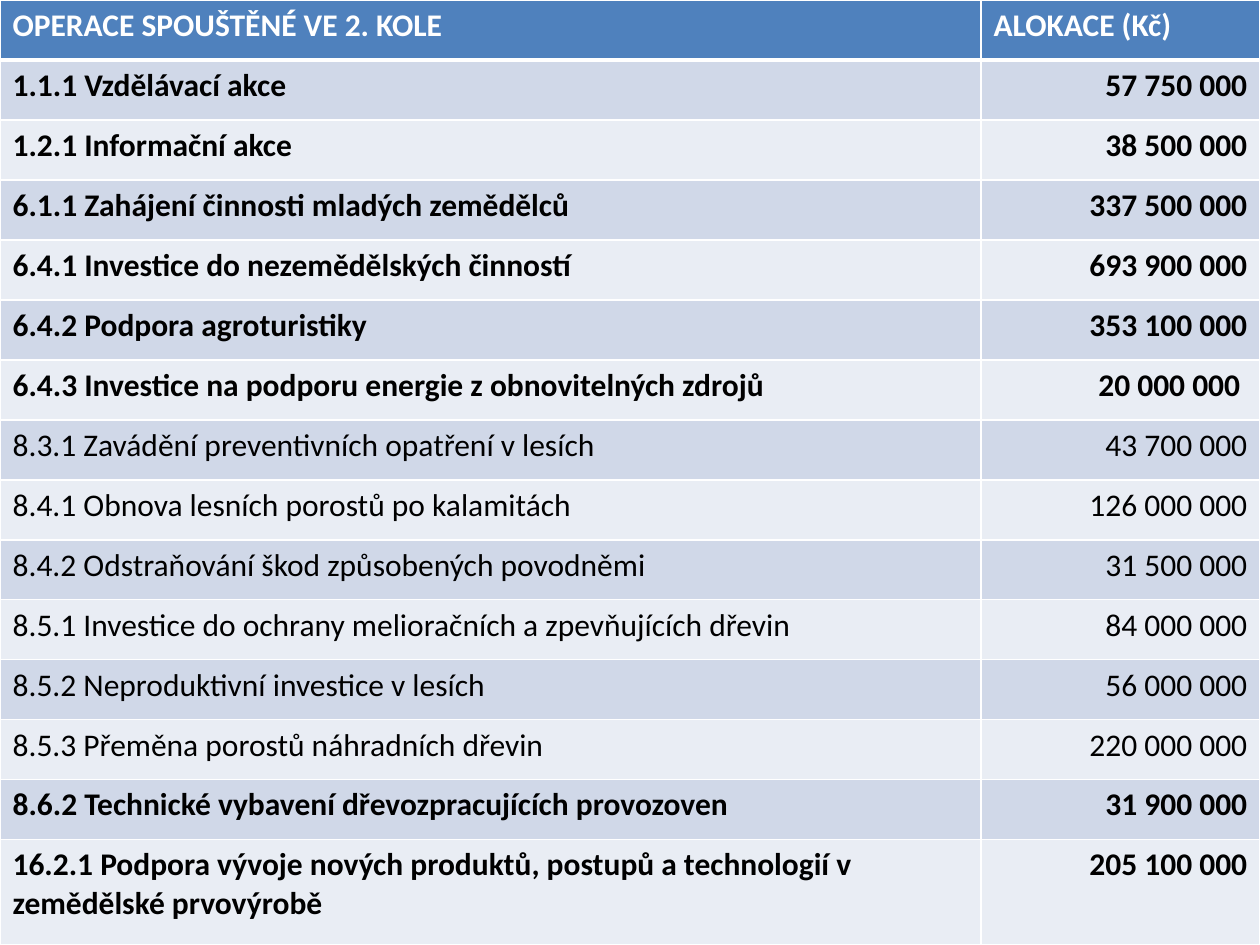
from lxml import etree
from pptx import Presentation
from pptx import util as u
from pptx.dml.color import RGBColor
from pptx.enum import text
from pptx.oxml.ns import qn

WIDTH, HEIGHT = 1260, 945
NAME_WIDTH, ROW_HEIGHT = 981, 60
WHITE, BLACK, HEADER_FILL = "FFFFFF", "000000", "4F81BD"
BAND_FILLS = ("E9EDF4", "D0D8E8")
HEADINGS = ("OPERACE SPOUŠTĚNÉ VE 2. KOLE", "ALOKACE (Kč)")
OPERATIONS = [
    ("1.1.1 Vzdělávací akce", "57 750 000", True),
    ("1.2.1 Informační akce", "38 500 000", True),
    ("6.1.1 Zahájení činnosti mladých zemědělců", "337 500 000", True),
    ("6.4.1 Investice do nezemědělských činností", "693 900 000", True),
    ("6.4.2 Podpora agroturistiky", "353 100 000", True),
    ("6.4.3 Investice na podporu energie z obnovitelných zdrojů", "20 000 000 ", True),
    ("8.3.1 Zavádění preventivních opatření v lesích", "43 700 000", False),
    ("8.4.1 Obnova lesních porostů po kalamitách", "126 000 000", False),
    ("8.4.2 Odstraňování škod způsobených povodněmi", "31 500 000", False),
    ("8.5.1 Investice do ochrany melioračních a zpevňujících dřevin", "84 000 000", False),
    ("8.5.2 Neproduktivní investice v lesích", "56 000 000", False),
    ("8.5.3 Přeměna porostů náhradních dřevin", "220 000 000", False),
    ("8.6.2 Technické vybavení dřevozpracujících provozoven", "31 900 000", True),
    ("16.2.1 Podpora vývoje nových produktů, postupů a technologií v zemědělské prvovýrobě",
     "205 100 000", True),
]


def px(length):
    """Turn px into EMU."""
    return u.Emu(round(length * 914400 / 126))


def colour(value):
    """Turn a hex string into a colour."""
    return RGBColor.from_string(value)


def set_borders(cell, top, bottom):
    """Give a cell white borders, with top and bottom widths in points."""
    properties = cell._tc.get_or_add_tcPr()
    for side, width in (("L", 1), ("R", 1), ("T", top), ("B", bottom)):
        line = etree.SubElement(properties, qn(f"a:ln{side}"), w=str(u.Pt(width)))
        fill = etree.SubElement(line, qn("a:solidFill"))
        etree.SubElement(fill, qn("a:srgbClr"), val=WHITE)


def fill_cell(cell, wording, fill, ink, bold, align):
    """Write and colour one cell."""
    cell.fill.solid()
    cell.fill.fore_color.rgb = colour(fill)
    para = cell.text_frame.paragraphs[0]
    para.text = wording
    para.alignment = align
    font = para.runs[0].font
    font.name, font.size, font.bold = "Calibri", u.Pt(18), bold
    font.color.rgb = colour(ink)


def add_allocation_table(page):
    """Add the table of operations and their allocations."""
    count = len(OPERATIONS) + 1
    table = page.shapes.add_table(count, 2, 0, 0, px(WIDTH), px(HEIGHT)).table
    table.columns[0].width = px(NAME_WIDTH)
    table.columns[1].width = px(WIDTH - NAME_WIDTH)
    left, right = text.PP_ALIGN.LEFT, text.PP_ALIGN.RIGHT
    for index, (name, amount, bold) in enumerate([(*HEADINGS, True), *OPERATIONS]):
        header, last = index == 0, index == count - 1
        table.rows[index].height = px(HEIGHT - ROW_HEIGHT * index if last else ROW_HEIGHT)
        fill = HEADER_FILL if header else BAND_FILLS[index % 2]
        ink = WHITE if header else BLACK
        aligns = (left, left if header else right)
        for column, wording in enumerate((name, amount)):
            cell = table.cell(index, column)
            set_borders(cell, 3 if index == 1 else 1, 3 if header else 1)
            fill_cell(cell, wording, fill, ink, bold, aligns[column])


def main():
    """Build and save the deck."""
    deck = Presentation()
    deck.slide_width, deck.slide_height = px(WIDTH), px(HEIGHT)
    page = deck.slides.add_slide(deck.slide_layouts[6])
    add_allocation_table(page)
    deck.save("out.pptx")


if __name__ == "__main__":
    main()
